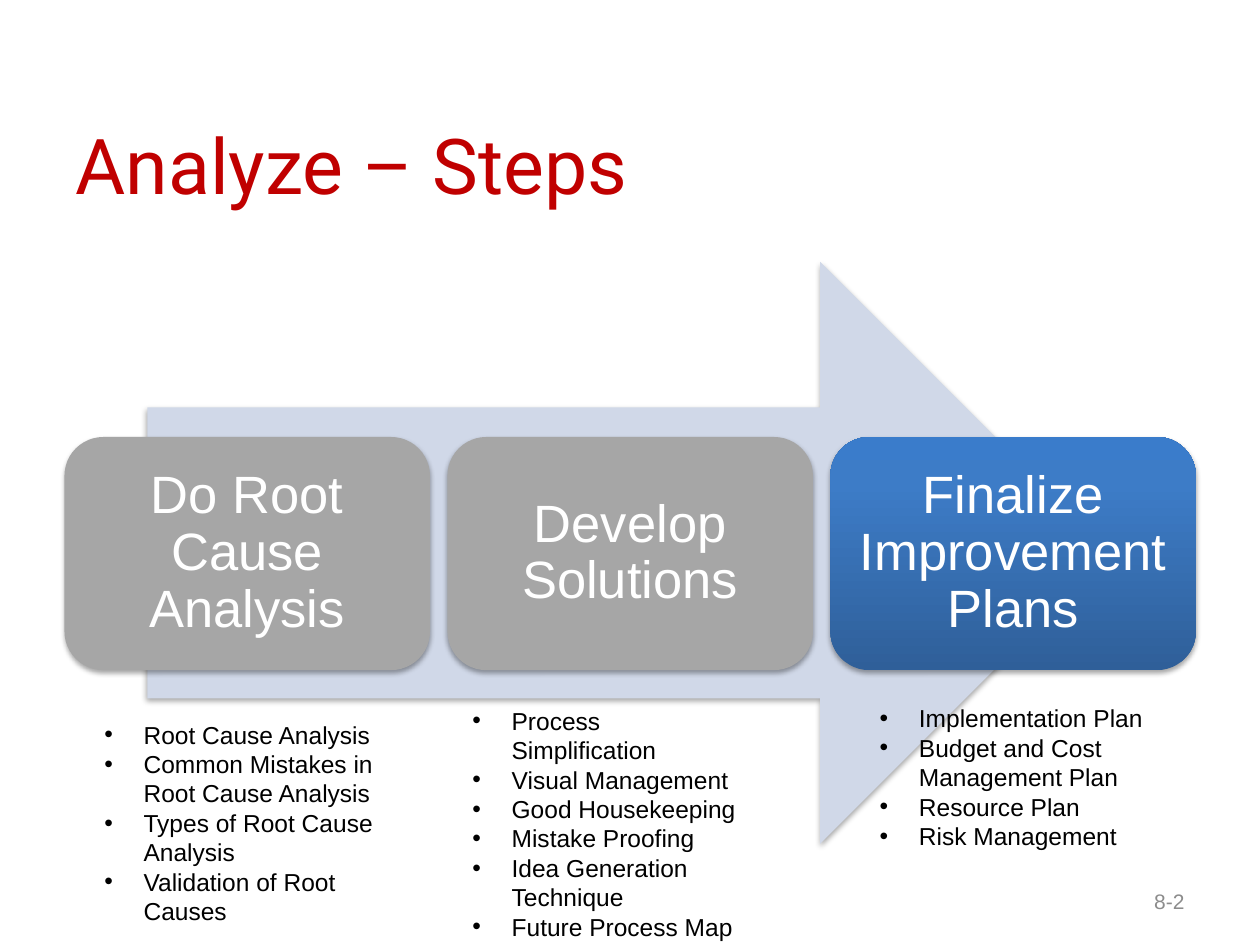
from lxml.etree import SubElement
from pptx import Presentation
from pptx.dml.color import RGBColor
from pptx.enum.shapes import MSO_SHAPE
from pptx.enum.text import MSO_ANCHOR, MSO_AUTO_SIZE, PP_ALIGN
from pptx.oxml.ns import qn
from pptx.util import Cm, Pt

# Content: card text, list place (left, top, height in cm), list items
TITLE = "Analyze – Steps"
NUMBER = "8-2"
STEPS = [
    ("Do Root Cause Analysis", (1.85, 14.38, 4.45),
     ["Root Cause Analysis", "Common Mistakes in Root Cause Analysis",
      "Types of Root Cause Analysis", "Validation of Root Causes"]),
    ("Develop Solutions", (9.27, 14.1, 5.05),
     ["Process Simplification", "Visual Management", "Good Housekeeping",
      "Mistake Proofing", "Idea Generation Technique", "Future Process Map"]),
    ("Finalize Improvement Plans", (17.48, 14.05, 3.25),
     ["Implementation Plan", "Budget and Cost Management Plan",
      "Resource Plan", "Risk Management"]),
]
ACTIVE = 2

THEME = {
    "head": ("Roboto", 44, "C00000"),
    "card": ("Arial", 30, "FFFFFF"),
    "list": ("Arial", 14, "000000"),
    "page": ("Arial", 12, "8C8C8C"),
    "arrow": "D0D8E8",
    "done": "A6A6A6",
    "active": [(0, "2F5F99"), (80, "3D7CC7"), (100, "3A7CCB")],
}

# Card row in cm
LEFT, TOP, WIDE, HIGH, GAP = 1.3, 8.81, 7.37, 4.7, 0.35


def style(para, role, align=PP_ALIGN.LEFT):
    font = para.font
    font.name, size, color = THEME[role]
    font.size = Pt(size)
    font.bold = False
    font.color.rgb = RGBColor.from_string(color)
    para.alignment = align


def place(shape, left, top, wide, high):
    shape.left, shape.top = Cm(left), Cm(top)
    shape.width, shape.height = Cm(wide), Cm(high)


def shade(shape):
    shape.shadow.inherit = False
    fx = shape.element.spPr.find(qn("a:effectLst"))
    glow = SubElement(fx, qn("a:outerShdw"), blurRad=str(Pt(3.1)),
                      dist=str(Pt(1.8)), dir="5400000", rotWithShape="0")
    tint = SubElement(glow, qn("a:srgbClr"), val="000000")
    SubElement(tint, qn("a:alpha"), val="35000")


def blend(shape, stops):
    shape.fill.gradient()
    shape.fill.gradient_angle = 90
    group = shape.element.spPr.find(".//" + qn("a:gsLst"))
    for old in list(group):
        group.remove(old)
    for pos, color in stops:
        stop = SubElement(group, qn("a:gs"), pos=str(pos * 1000))
        SubElement(stop, qn("a:srgbClr"), val=color)


def draw(slide, kind, area, fill):
    shape = slide.shapes.add_shape(kind, *map(Cm, area))
    if isinstance(fill, list):
        blend(shape, fill)
    else:
        shape.fill.solid()
        shape.fill.fore_color.rgb = RGBColor.from_string(fill)
    shape.line.fill.background()
    shade(shape)
    return shape


def bullet(para):
    props = para._p.get_or_add_pPr()
    props.set("marL", str(Cm(0.79)))
    props.set("indent", str(-Cm(0.79)))
    SubElement(props, qn("a:buFont"), typeface="Arial")
    SubElement(props, qn("a:buChar"), char="•")


def add_card(slide, col, text):
    area = LEFT + col * (WIDE + GAP), TOP, WIDE, HIGH
    fill = THEME["active" if col == ACTIVE else "done"]
    frame = draw(slide, MSO_SHAPE.ROUNDED_RECTANGLE, area, fill).text_frame
    frame.margin_left = frame.margin_right = Cm(0.2)
    frame.word_wrap = True
    frame.vertical_anchor = MSO_ANCHOR.MIDDLE
    para = frame.paragraphs[0]
    para.text = text
    para.line_spacing = 0.9
    style(para, "card", PP_ALIGN.CENTER)


def fill_list(box, spot, items):
    left, top, high = spot
    place(box, left, top, 6.12, high)
    frame = box.text_frame
    frame.word_wrap = True
    frame.auto_size = MSO_AUTO_SIZE.NONE
    frame.vertical_anchor = MSO_ANCHOR.TOP
    frame.text = "\n".join(items)
    for para in frame.paragraphs:
        bullet(para)
        para.space_before = Pt(0)
        style(para, "list")


def main():
    deck = Presentation()
    deck.slide_width, deck.slide_height = Cm(25.4), Cm(19.05)
    slide = deck.slides.add_slide(deck.slide_layouts.get_by_name("Comparison"))

    # Title
    title = slide.shapes.title
    place(title, 1.27, 1.7, 19.25, 3.18)
    title.text = TITLE
    title.text_frame.vertical_anchor = MSO_ANCHOR.MIDDLE
    style(title.text_frame.paragraphs[0], "head")

    # Arrow and cards
    bodies = list(slide.placeholders)[1:]
    draw(slide, MSO_SHAPE.RIGHT_ARROW, (2.97, 5.28, 19.43, 11.73),
         THEME["arrow"])
    for col, (text, _, _) in enumerate(STEPS):
        add_card(slide, col, text)

    # Lists, brought in front of the arrow
    tree = slide.shapes.element
    for box, (_, spot, items) in zip(bodies, STEPS):
        fill_list(box, spot, items)
        tree.append(box.element)
    for box in bodies[len(STEPS):]:
        tree.remove(box.element)

    # Page number
    page = slide.shapes.add_textbox(Cm(18.21), Cm(17.65), Cm(5.92), Cm(1.02))
    page.text_frame.word_wrap = True
    page.text_frame.vertical_anchor = MSO_ANCHOR.MIDDLE
    page.text_frame.text = NUMBER
    style(page.text_frame.paragraphs[0], "page", PP_ALIGN.RIGHT)

    deck.save("out.pptx")


if __name__ == "__main__":
    main()
